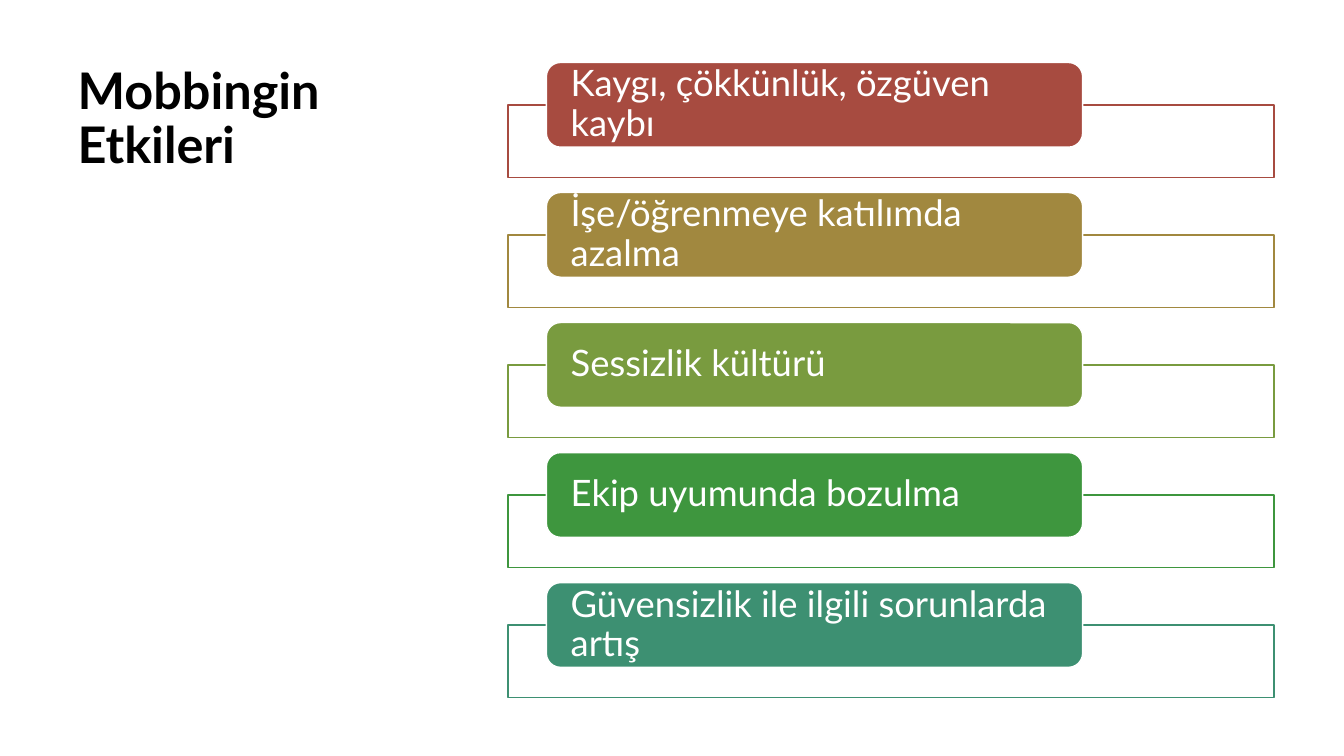
from dataclasses import dataclass

from lxml.etree import SubElement
from pptx import Presentation
from pptx.dml.color import RGBColor
from pptx.enum.shapes import MSO_SHAPE
from pptx.enum.text import MSO_ANCHOR, MSO_AUTO_SIZE, PP_ALIGN
from pptx.oxml.ns import qn
from pptx.util import Pt


@dataclass(frozen=True)
class Theme:
    font: str = "Lato"
    title_size: float = 36
    effect_size: float = 26
    line_width: float = 1
    line_spacing: float = 0.9
    ink: str = "000000"
    paper: str = "FFFFFF"
    frame_opacity: int = 90


THEME = Theme()

EFFECTS = [
    ("Kaygı, çökkünlük, özgüven kaybı", "A74B40"),
    ("İşe/öğrenmeye katılımda azalma", "A1883F"),
    ("Sessizlik kültürü", "799B3F"),
    ("Ekip uyumunda bozulma", "3E963E"),
    ("Güvensizlik ile ilgili sorunlarda artış", "3D9072"),
]


def apply_format(target, values):
    for attribute, value in values.items():
        setattr(target, attribute, value)


def write_text(holder, wording, size, color, bold, frame_format):
    frame = holder.text_frame
    frame.text = wording
    apply_format(frame, {"word_wrap": True, "auto_size": MSO_AUTO_SIZE.NONE, **frame_format})
    paragraph = frame.paragraphs[0]
    apply_format(paragraph, {"alignment": PP_ALIGN.LEFT, "line_spacing": THEME.line_spacing})
    font = paragraph.runs[0].font
    apply_format(font, {"name": THEME.font, "size": Pt(size), "bold": bold})
    font.color.rgb = RGBColor.from_string(color)


def add_panel(group, preset, box, fill, line):
    panel = group.shapes.add_shape(preset, *map(Pt, box))
    panel.shadow.inherit = False
    panel.fill.solid()
    panel.fill.fore_color.rgb = RGBColor.from_string(fill)
    panel.line.color.rgb = RGBColor.from_string(line)
    panel.line.width = Pt(THEME.line_width)
    return panel


def set_opacity(panel, percent):
    color = panel.fill._xPr.find(qn("a:solidFill"))[0]
    SubElement(color, qn("a:alpha"), val=str(percent * 1000))


def place_title(slide, box, wording):
    title = slide.shapes.title
    apply_format(title, dict(zip(("left", "top", "width", "height"), map(Pt, box))))
    write_text(title, wording, THEME.title_size, THEME.ink, True,
               {"vertical_anchor": MSO_ANCHOR.TOP})


def place_effect(group, box, wording, color):
    left, top, width, height = box
    label_height = 60.5
    frame_drop = 30.24
    frame = add_panel(group, MSO_SHAPE.RECTANGLE,
                      (left, top + frame_drop, width, height - frame_drop),
                      THEME.paper, color)
    set_opacity(frame, THEME.frame_opacity)
    label = add_panel(group, MSO_SHAPE.ROUNDED_RECTANGLE,
                      (left + width * 0.05, top, width * 0.7, label_height),
                      color, THEME.paper)
    write_text(label, wording, THEME.effect_size, THEME.paper, False,
               {"vertical_anchor": MSO_ANCHOR.MIDDLE,
                "margin_left": Pt(14.4), "margin_right": Pt(14.4),
                "margin_top": 0, "margin_bottom": 0})


def place_effects(slide, box, effects):
    left, top, width, height = box
    gap = 10.85
    row_height = (height - gap * (len(effects) - 1)) / len(effects)
    group = slide.shapes.add_group_shape()
    for index, (wording, color) in enumerate(effects):
        row_top = top + index * (row_height + gap)
        place_effect(group, (left, row_top, width, row_height), wording, color)


def main():
    deck = Presentation()
    apply_format(deck, {"slide_width": Pt(960), "slide_height": Pt(540)})
    slide = deck.slides.add_slide(deck.slide_layouts[5])
    place_title(slide, (48.24, 43.2, 275, 456), "Mobbingin Etkileri")
    place_effects(slide, (362.9, 44.64, 547.2, 453.6), EFFECTS)
    deck.save("out.pptx")


if __name__ == "__main__":
    main()
